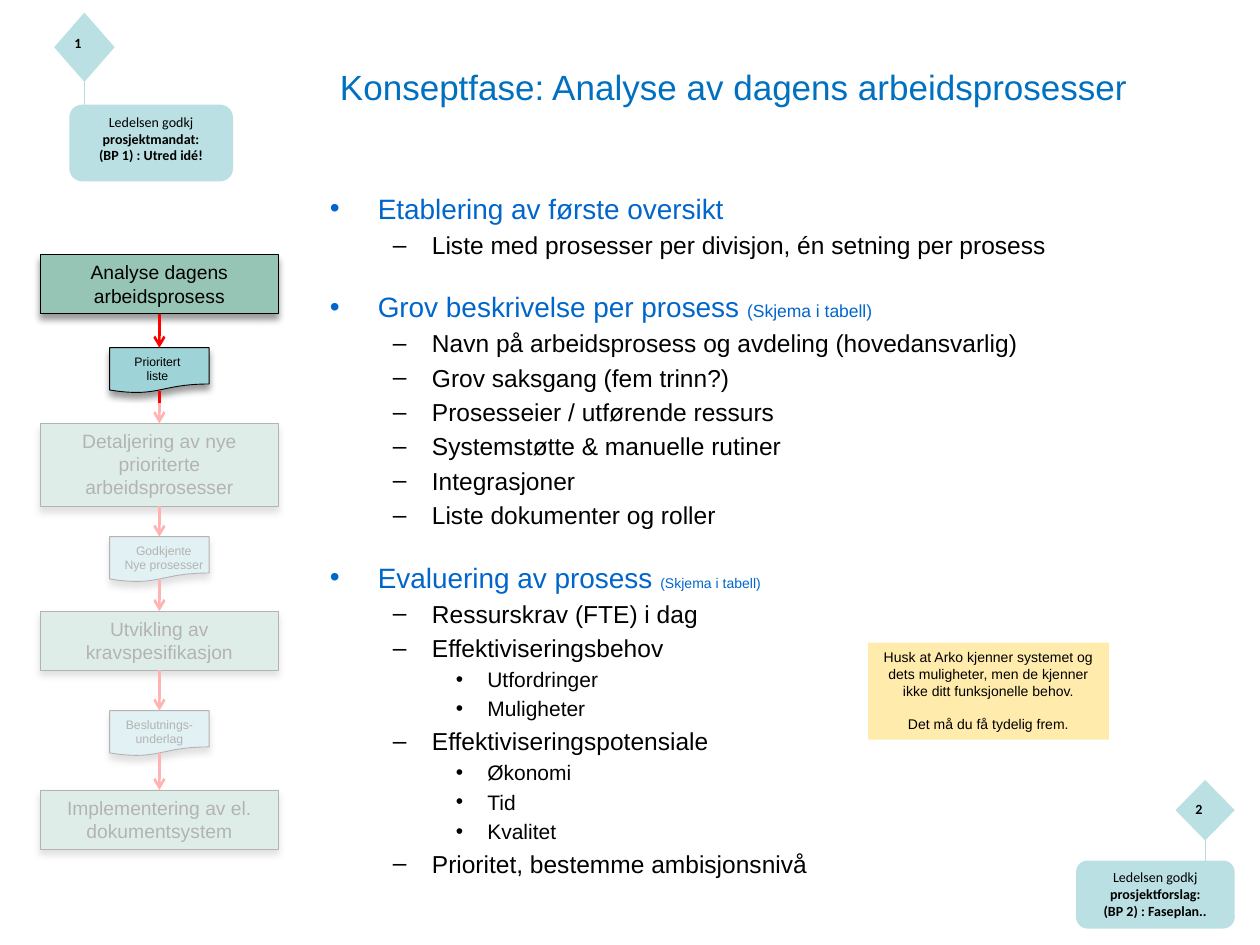
from dataclasses import dataclass
from itertools import pairwise
from typing import Any, NamedTuple

from pptx import Presentation
from pptx.dml.color import RGBColor
from pptx.enum.shapes import MSO_CONNECTOR as Conn, MSO_SHAPE as Kind
from pptx.enum.text import MSO_ANCHOR as Anchor, PP_ALIGN as Align
from pptx.oxml.ns import qn
from pptx.util import Inches, Length, Pt
from lxml.etree import SubElement as Sub


@dataclass(frozen=True)
class Theme:
    font: str = "Arial"
    alt: str = "Calibri"
    ink: str = "000000"
    paper: str = "FFFFFF"
    title: str = "0070C0"
    head: str = "0066CC"
    step: str = "96C4B5"
    doc: str = "9ED3D7"
    arrow: str = "FF0000"
    gate: str = "BBE0E3"
    stem: str = "B6DCDF"
    note: str = "FFEBAB"
    big: float = 20
    mid: float = 11
    small: float = 8
    tiny: float = 7


class Box(NamedTuple):
    col: float
    row: float
    wide: float
    high: float

    @property
    def axis(self) -> float:
        return self.col + self.wide / 2

    @property
    def base(self) -> float:
        return self.row + self.high


class Level(NamedTuple):
    mark: str
    left: float
    hang: float
    size: float
    color: str
    gap: float


class Item(NamedTuple):
    level: int
    text: str
    aside: float = 0


class Step(NamedTuple):
    box: Box
    text: str


class Doc(NamedTuple):
    box: Box
    label: Box
    lines: list[str]


class Gate(NamedTuple):
    sign: Box
    card: Box
    mark: str
    lines: list[str]


T = Theme()
LEVELS = [
    Level("•", 3.8, 3.8, 16, T.head, 17.5),
    Level("–", 8.1, 3.1, 14, T.ink, 2.8),
    Level("•", 12.5, 2.5, 12, T.ink, 2.4),
]
ASIDE = "(Skjema i tabell)"
ITEMS = [
    Item(0, "Etablering av første oversikt"),
    Item(1, "Liste med prosesser per divisjon, én setning per prosess"),
    Item(0, "Grov beskrivelse per prosess ", 10),
    Item(1, "Navn på arbeidsprosess og avdeling (hovedansvarlig)"),
    Item(1, "Grov saksgang (fem trinn?)"),
    Item(1, "Prosesseier / utførende ressurs"),
    Item(1, "Systemstøtte & manuelle rutiner"),
    Item(1, "Integrasjoner"),
    Item(1, "Liste dokumenter og roller"),
    Item(0, "Evaluering av prosess ", 8),
    Item(1, "Ressurskrav (FTE) i dag"),
    Item(1, "Effektiviseringsbehov"),
    Item(2, "Utfordringer"),
    Item(2, "Muligheter"),
    Item(1, "Effektiviseringspotensiale"),
    Item(2, "Økonomi"),
    Item(2, "Tid"),
    Item(2, "Kvalitet"),
    Item(1, "Prioritet, bestemme ambisjonsnivå"),
]
STEPS = [
    Step(Box(3.2, 20.2, 18.9, 4.7), "Analyse dagens arbeidsprosess"),
    Step(Box(3.2, 33.6, 18.9, 6.6), "Detaljering av nye prioriterte arbeidsprosesser"),
    Step(Box(3.2, 48.5, 18.9, 4.7), "Utvikling av kravspesifikasjon"),
    Step(Box(3.2, 62.7, 18.9, 4.7), "Implementering av el. dokumentsystem"),
]
DOCS = [
    Doc(Box(8.7, 27.6, 7.9, 3.6), Box(9.2, 27.6, 6.6, 3.4), ["Prioritert", "liste"]),
    Doc(Box(8.7, 42.6, 7.9, 3.6), Box(8.7, 42.6, 8.6, 3.4), ["Godkjente", "Nye prosesser"]),
    Doc(Box(8.7, 56.4, 7.9, 3.6), Box(8.7, 56.4, 7.9, 3.4), ["Beslutnings-underlag"]),
]
GATES = [
    Gate(Box(4.3, 1, 4.8, 5.5), Box(5.5, 8.3, 13, 6.1), "1",
         ["Ledelsen godkj", "prosjektmandat:", "(BP 1) : Utred idé!"]),
    Gate(Box(93.3, 61.9, 4.7, 4.8), Box(85.4, 68.3, 12.6, 5.4), "2",
         ["Ledelsen godkj", "prosjektforslag:", "(BP 2) : Faseplan.."]),
]
NOTE = [
    "Husk at Arko kjenner systemet og dets muligheter, men de kjenner ikke ditt funksjonelle behov.",
    "Det må du få tydelig frem.",
]


def cell(n: float) -> Length:
    return Inches(n / 10)


def place(box: Box) -> list[Length]:
    return [cell(n) for n in box]


def style(run: Any, size: float, color: str = T.ink, font: str = T.font) -> None:
    run.font.size, run.font.name = Pt(size), font
    run.font.color.rgb = RGBColor.from_string(color)


def write(shape: Any, lines: list[str], size: float, color: str = T.ink,
          font: str = T.font, align: Any = Align.CENTER) -> Any:
    frame = shape.text_frame
    frame.word_wrap, frame.vertical_anchor = True, Anchor.TOP
    frame.text = "\n".join(lines)
    for para in frame.paragraphs:
        para.alignment = align
        for run in para.runs:
            style(run, size, color, font)
    return frame


def block(pen: Any, kind: Any, box: Box, fill: str, raised: bool = False) -> Any:
    shape = pen.add_shape(kind, *place(box))
    shape.shadow.inherit = False
    shape.fill.solid()
    shape.fill.fore_color.rgb = RGBColor.from_string(fill)
    if not raised:
        shape.line.fill.background()
        return shape
    shape.line.color.rgb = RGBColor.from_string(T.ink)
    shape.line.width = Pt(0.5)
    cast = Sub(shape._element.spPr.find(qn("a:effectLst")), qn("a:outerShdw"), blurRad=str(Pt(4)),
               dist=str(Pt(3)), dir="5400000", rotWithShape="0")
    tint = Sub(cast, qn("a:srgbClr"), val=T.ink)
    Sub(tint, qn("a:alpha"), val="40000")
    return shape


def link(pen: Any, col: float, top: float, end: float, color: str, width: float, tip: bool = False) -> None:
    line = pen.add_connector(Conn.STRAIGHT, cell(col), cell(top), cell(col), cell(end))
    line.line.color.rgb = RGBColor.from_string(color)
    line.line.width = Pt(width)
    if tip:
        Sub(line.line._get_or_add_ln(), qn("a:tailEnd"), type="arrow")
    Sub(line._element.spPr, qn("a:effectLst"))


def outline(pen: Any) -> None:
    frame = pen.add_textbox(*place(Box(25.2, 14.7, 72, 57))).text_frame
    frame.word_wrap = True
    for i, item in enumerate(ITEMS):
        para = frame.add_paragraph() if i else frame.paragraphs[0]
        look = LEVELS[item.level]
        para.text, para.level = item.text, item.level
        para.space_before = Pt(look.gap if i else 0)
        prop = para._p.get_or_add_pPr()
        prop.set("marL", str(cell(look.left)))
        prop.set("indent", str(-cell(look.hang)))
        Sub(prop, qn("a:buFont"), typeface=T.font)
        Sub(prop, qn("a:buChar"), char=look.mark)
        style(para.runs[0], look.size, look.color)
        if item.aside:
            run = para.add_run()
            run.text = ASIDE
            style(run, item.aside, look.color)


def flow(pen: Any) -> None:
    for step in STEPS:
        write(block(pen, Kind.RECTANGLE, step.box, T.step, True), [step.text], T.mid)
    for doc, (prev, last) in zip(DOCS, pairwise(STEPS)):
        block(pen, Kind.FLOWCHART_DOCUMENT, doc.box, T.doc, True)
        write(pen.add_textbox(*place(doc.label)), doc.lines, T.tiny)
        link(pen, doc.box.axis, prev.box.base, doc.box.row, T.arrow, 1.5, True)
        link(pen, doc.box.axis, doc.label.base, last.box.row, T.arrow, 1.5, True)
    veil = block(pen, Kind.ROUNDED_RECTANGLE, Box(0, 32, 26, 37), T.paper)
    Sub(veil._element.spPr.find(qn("a:solidFill"))[0], qn("a:alpha"), val="70000")


def portal(pen: Any, gate: Gate) -> None:
    group = pen.add_group_shape().shapes
    sign = block(group, Kind.DIAMOND, gate.sign, T.gate)
    card = block(group, Kind.ROUNDED_RECTANGLE, gate.card, T.gate)
    card.adjustments[0] = 0.17
    link(group, gate.sign.axis, gate.sign.base, gate.card.row, T.stem, 0.75)
    mark = write(sign, [gate.mark], T.small, font=T.alt, align=Align.LEFT)
    text = write(card, gate.lines, T.small, font=T.alt)
    for frame in (mark, text):
        frame.margin_left = frame.margin_right = frame.margin_top = frame.margin_bottom = cell(0.4)
    for para in [*mark.paragraphs, *text.paragraphs[1:]]:
        para.runs[0].font.bold = True


def main() -> None:
    deck = Presentation()
    deck.slide_width, deck.slide_height = Inches(10), Inches(7.5)
    pen = deck.slides.add_slide(deck.slide_layouts[6]).shapes
    title = pen.add_textbox(*place(Box(26, 3, 69, 7.7)))
    head = write(title, ["Konseptfase: Analyse av dagens arbeidsprosesser"], T.big, T.title, align=Align.LEFT)
    head.vertical_anchor = Anchor.MIDDLE
    outline(pen)
    flow(pen)
    for gate in GATES:
        portal(pen, gate)
    note = write(block(pen, Kind.RECTANGLE, Box(68.9, 51, 19.1, 7.7), T.note), NOTE, T.small)
    note.paragraphs[1].space_before = Pt(9.5)
    deck.save("out.pptx")


if __name__ == "__main__":
    main()
